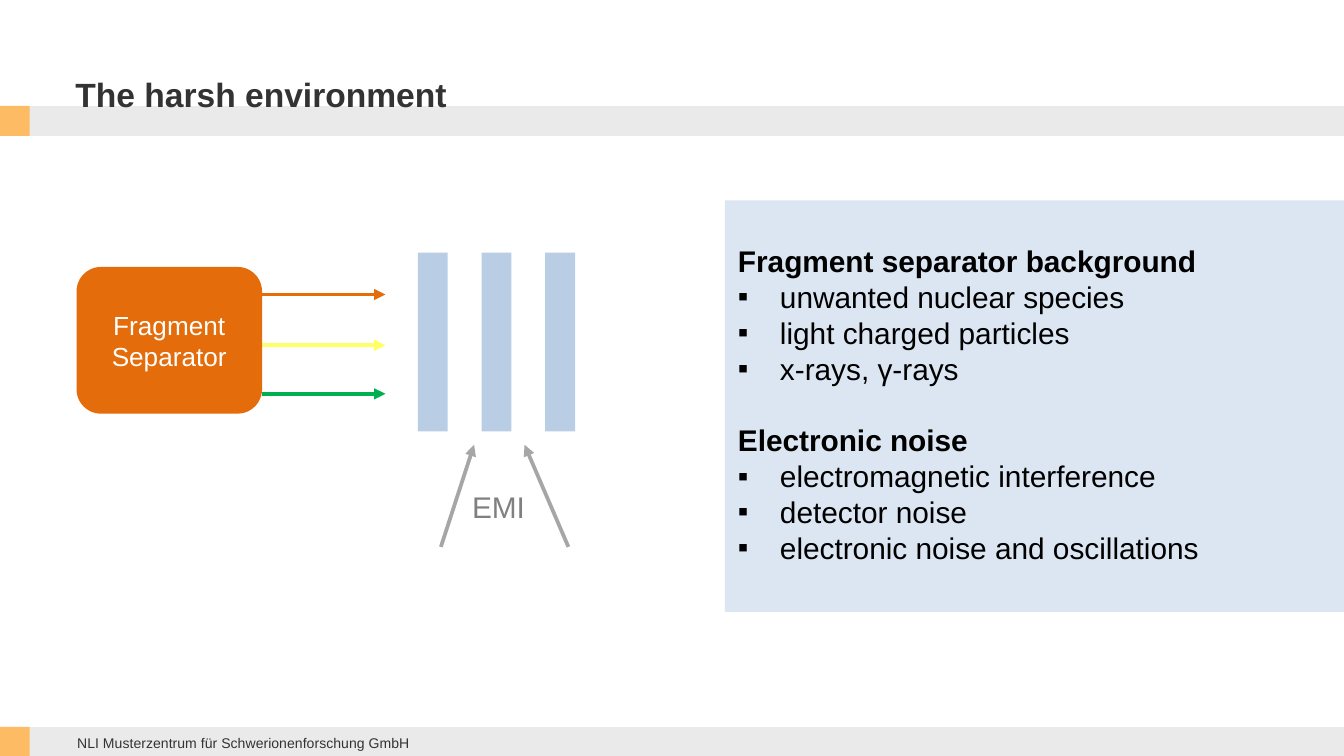
import pptx
import pptx.util
import pptx.dml.color
import pptx.enum.shapes
import pptx.enum.text
import pptx.oxml
import pptx.oxml.ns

Pt = pptx.util.Pt
SHAPE = pptx.enum.shapes.MSO_SHAPE
ANCHOR = pptx.enum.text.MSO_ANCHOR
ALIGN = pptx.enum.text.PP_ALIGN

WIDTH, HEIGHT = 720, 405
TITLE = "The harsh environment"
FOOTER = "NLI Musterzentrum für Schwerionenforschung GmbH"
TOPICS = [
    ("Fragment separator background",
     ["unwanted nuclear species", "light charged particles", "x-rays, γ-rays"]),
    ("Electronic noise",
     ["electromagnetic interference", "detector noise",
      "electronic noise and oscillations"]),
]
BEAMS = [(157.8, "E46C0A"), (185, "FFFF66"), (211, "00B050")]
EMI_ARROWS = [((236.2, 293), (254, 238.3)), ((304.5, 293), (281, 238.3))]
BAND_CENTRES = [64.8, 397.4]
BAND = 16
DETECTOR_LEFT, DETECTOR_STEP, DETECTOR_COUNT = 223.9, 34.1, 3
LINE_PITCH = 19.2
BULLET_INDENT = 22.5

deck = pptx.Presentation()
deck.slide_width, deck.slide_height = Pt(WIDTH), Pt(HEIGHT)
slide = deck.slides.add_slide(deck.slide_layouts[6])


def rgb(code):
    return pptx.dml.color.RGBColor.from_string(code)


def add_xml(parent, markup):
    namespace = pptx.oxml.ns.nsdecls("a")
    tag, rest = markup.split(" ", 1)
    parent.append(pptx.oxml.parse_xml(f"<{tag} {namespace} {rest}"))


def add_block(kind, left, top, width, height, fill):
    block = slide.shapes.add_shape(kind, Pt(left), Pt(top), Pt(width), Pt(height))
    block.shadow.inherit = False
    block.fill.solid()
    block.fill.fore_color.rgb = rgb(fill)
    block.line.fill.background()
    return block


def add_line(start, end, color, weight, arrow=False):
    line = slide.shapes.add_connector(
        pptx.enum.shapes.MSO_CONNECTOR.STRAIGHT, *map(Pt, start + end))
    line.line.color.rgb = rgb(color)
    line.line.width = Pt(weight)
    if arrow:
        add_xml(line.line._get_or_add_ln(), 'a:tailEnd type="triangle"/>')
    add_xml(line._element.spPr, "a:effectLst />")


def write(paragraph, text, size, color, bold=False):
    run = paragraph.add_run()
    run.text = text
    run.font.name = "Arial"
    run.font.size = Pt(size)
    run.font.bold = bold
    run.font.color.rgb = rgb(color)


def add_label(text, left, top, width, height, size, color,
              anchor=ANCHOR.TOP, bold=False, wrap=True):
    frame = slide.shapes.add_textbox(
        Pt(left), Pt(top), Pt(width), Pt(height)).text_frame
    frame.word_wrap = wrap
    frame.vertical_anchor = anchor
    write(frame.paragraphs[0], text, size, color, bold)


# Header and footer bands
for centre in BAND_CENTRES:
    add_line((0, centre), (WIDTH, centre), "EAEAEA", BAND)
    add_block(SHAPE.RECTANGLE, 0, centre - BAND / 2, BAND, BAND, "FDBB63")
add_label(FOOTER, 34.2, 389.5, 278, 16.5, 7.5, "333333", ANCHOR.MIDDLE)
add_label(TITLE, 33.3, 18, 528, 46.8, 18, "333333", ANCHOR.BOTTOM, bold=True)

# Detector planes
for plane in range(DETECTOR_COUNT):
    add_block(SHAPE.RECTANGLE, DETECTOR_LEFT + plane * DETECTOR_STEP, 135.4,
              BAND, 95.8, "B9CDE5")

# Noise sources panel
panel = add_block(SHAPE.RECTANGLE, 388.3, 107.4, 331.7, 220.4, "DCE6F2").text_frame
panel.word_wrap = True
panel.vertical_anchor = ANCHOR.TOP
panel.margin_top = Pt(3.6 + LINE_PITCH)
lines = [(text, is_heading) for heading, items in TOPICS
         for text, is_heading in [(heading, True)] + [(item, False) for item in items]]
for index, (text, is_heading) in enumerate(lines):
    paragraph = panel.paragraphs[0] if index == 0 else panel.add_paragraph()
    paragraph.alignment = ALIGN.LEFT
    paragraph.line_spacing = Pt(LINE_PITCH)
    if is_heading and index:
        paragraph.space_before = Pt(LINE_PITCH)
    if not is_heading:
        properties = paragraph._p.get_or_add_pPr()
        properties.set("marL", str(Pt(BULLET_INDENT)))
        properties.set("indent", str(-Pt(BULLET_INDENT)))
        add_xml(properties, 'a:buFont typeface="Arial"/>')
        add_xml(properties, 'a:buChar char="▪"/>')
    write(paragraph, text, 16, "000000", is_heading)

# Beam and interference arrows
for height, color in BEAMS:
    add_line((140.4, height), (206.5, height), color, 2, arrow=True)
for start, end in EMI_ARROWS:
    add_line(start, end, "A6A6A6", 2, arrow=True)
add_label("EMI", 245.8, 258.5, 43, 26.6, 16, "808080", wrap=False)

separator = add_block(SHAPE.ROUNDED_RECTANGLE, 41, 143, 99.4, 78.6, "E46C0A").text_frame
separator.word_wrap = True
separator.vertical_anchor = ANCHOR.MIDDLE
separator.paragraphs[0].alignment = ALIGN.CENTER
write(separator.paragraphs[0], "Fragment Separator", 14, "FFFFFF")

deck.save("out.pptx")
